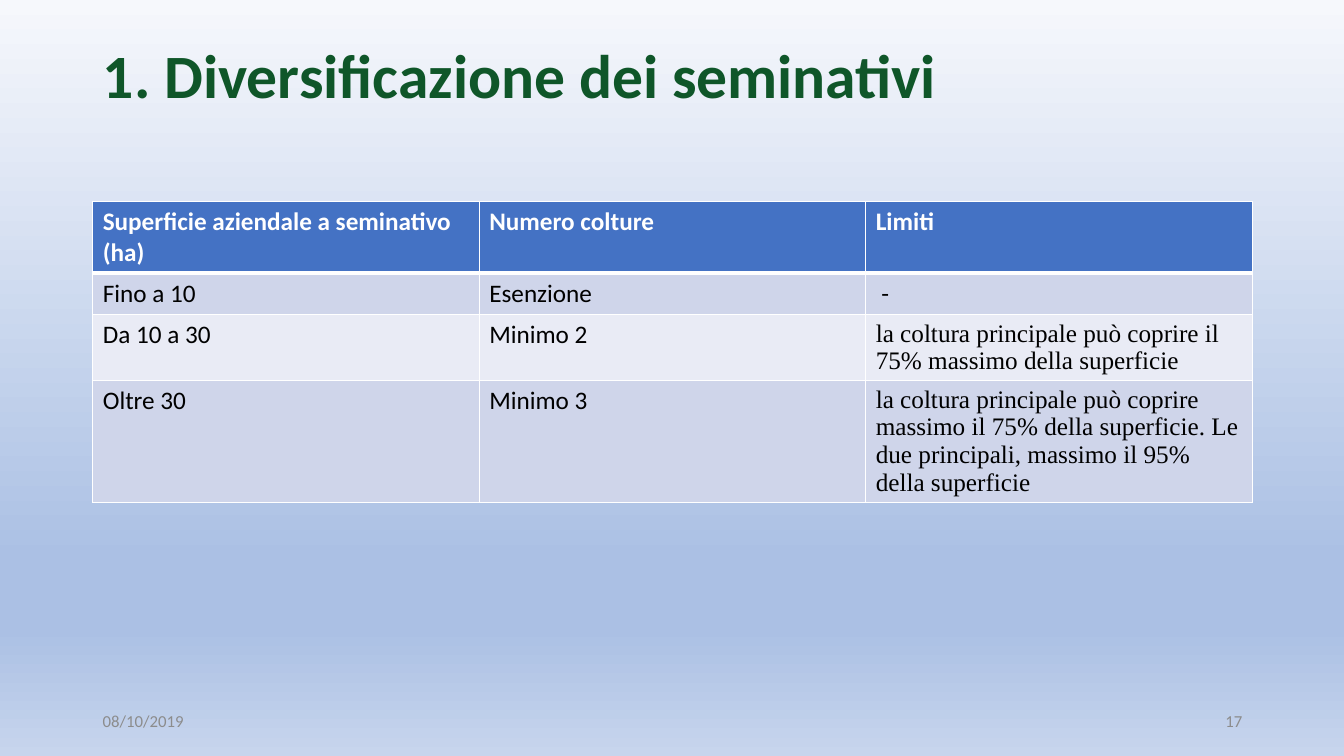
from pptx import Presentation
from pptx.dml.color import RGBColor
from pptx.enum.text import MSO_ANCHOR, PP_ALIGN
from pptx.oxml import parse_xml
from pptx.oxml.ns import nsdecls, qn
from pptx.util import Inches, Pt

COLORS = {
    "title": "0F5629",
    "header": "4472C4",
    "band_dark": "CFD5EA",
    "band_light": "E9EBF5",
    "white": "FFFFFF",
    "black": "000000",
    "footer": "8C8C8C",
}
BACKGROUND_STOPS = [(0, "F6F8FC"), (74, "ABC0E4"), (83, "ABC0E4"), (100, "C7D5ED")]
LEFT, WIDTH = 0.92, 11.5


def write(tf, text, size=18, color="black", bold=False, font="Calibri",
          align=PP_ALIGN.LEFT, anchor=MSO_ANCHOR.TOP, spacing=1.0):
    tf.word_wrap = True
    tf.vertical_anchor = anchor
    p = tf.paragraphs[0]
    p.alignment = align
    p.line_spacing = spacing
    r = p.add_run()
    r.text = text
    r.font.size = Pt(size)
    r.font.name = font
    r.font.bold = bold
    r.font.color.rgb = RGBColor.from_string(COLORS[color])


def set_borders(cell, bottom, top):
    """Give the cell white edges, with widths in points above and below."""
    tc_pr = cell._tc.get_or_add_tcPr()
    widths = {"lnL": 1, "lnR": 1, "lnT": top, "lnB": bottom}
    for i, (edge, width) in enumerate(widths.items()):
        tc_pr.insert(i, parse_xml(
            f'<a:{edge} {nsdecls("a")} w="{Pt(width)}"><a:solidFill>'
            f'<a:srgbClr val="{COLORS["white"]}"/></a:solidFill></a:{edge}>'))


prs = Presentation()
prs.slide_width = Inches(13.33)
prs.slide_height = Inches(7.5)
s = prs.slides.add_slide(prs.slide_layouts[5])

# Background gradient
s.background.fill.solid()
bg_pr = s.element.find(".//" + qn("p:bgPr"))
stops = "".join(f'<a:gs pos="{pos * 1000}"><a:srgbClr val="{color}"/></a:gs>'
                for pos, color in BACKGROUND_STOPS)
bg_pr.replace(bg_pr[0], parse_xml(
    f'<a:gradFill {nsdecls("a")} rotWithShape="1"><a:gsLst>{stops}</a:gsLst>'
    '<a:lin ang="5400000" scaled="0"/></a:gradFill>'))

# Title
title = s.shapes.title
title.left, title.top = Inches(LEFT), Inches(0.4)
title.width, title.height = Inches(WIDTH), Inches(1.45)
write(title.text_frame, "1. Diversificazione dei seminativi", size=44,
      color="title", bold=True, spacing=0.9)

# Table of crop limits
rows = [
    ("Superficie aziendale a seminativo (ha)", "Numero colture", "Limiti"),
    ("Fino a 10", "Esenzione", " -"),
    ("Da 10 a 30", "Minimo 2",
     "la coltura principale può coprire il 75% massimo della superficie"),
    ("Oltre 30", "Minimo 3",
     "la coltura principale può coprire massimo il 75% della superficie. "
     "Le due principali, massimo il 95% della superficie"),
]
row_heights = [0.7, 0.41, 0.65, 1.21]
row_fills = ["header", "band_dark", "band_light", "band_dark"]
table = s.shapes.add_table(len(rows), 3, Inches(LEFT), Inches(2),
                           Inches(WIDTH), Inches(sum(row_heights))).table
for i, texts in enumerate(rows):
    table.rows[i].height = Inches(row_heights[i])
    is_header = i == 0
    for j, text in enumerate(texts):
        cell = table.cell(i, j)
        cell.fill.solid()
        cell.fill.fore_color.rgb = RGBColor.from_string(COLORS[row_fills[i]])
        set_borders(cell, bottom=3 if is_header else 1, top=3 if i == 1 else 1)
        write(cell.text_frame, text, bold=is_header,
              color="white" if is_header else "black",
              font="Times New Roman" if i > 1 and j == 2 else "Calibri")

# Date and slide number
for x, text, align in [(LEFT, "08/10/2019", PP_ALIGN.LEFT),
                       (LEFT + WIDTH - 3, "17", PP_ALIGN.RIGHT)]:
    sp = s.shapes.add_textbox(Inches(x), Inches(6.95), Inches(3), Inches(0.4))
    write(sp.text_frame, text, size=12, color="footer", align=align,
          anchor=MSO_ANCHOR.MIDDLE)

prs.save("out.pptx")
